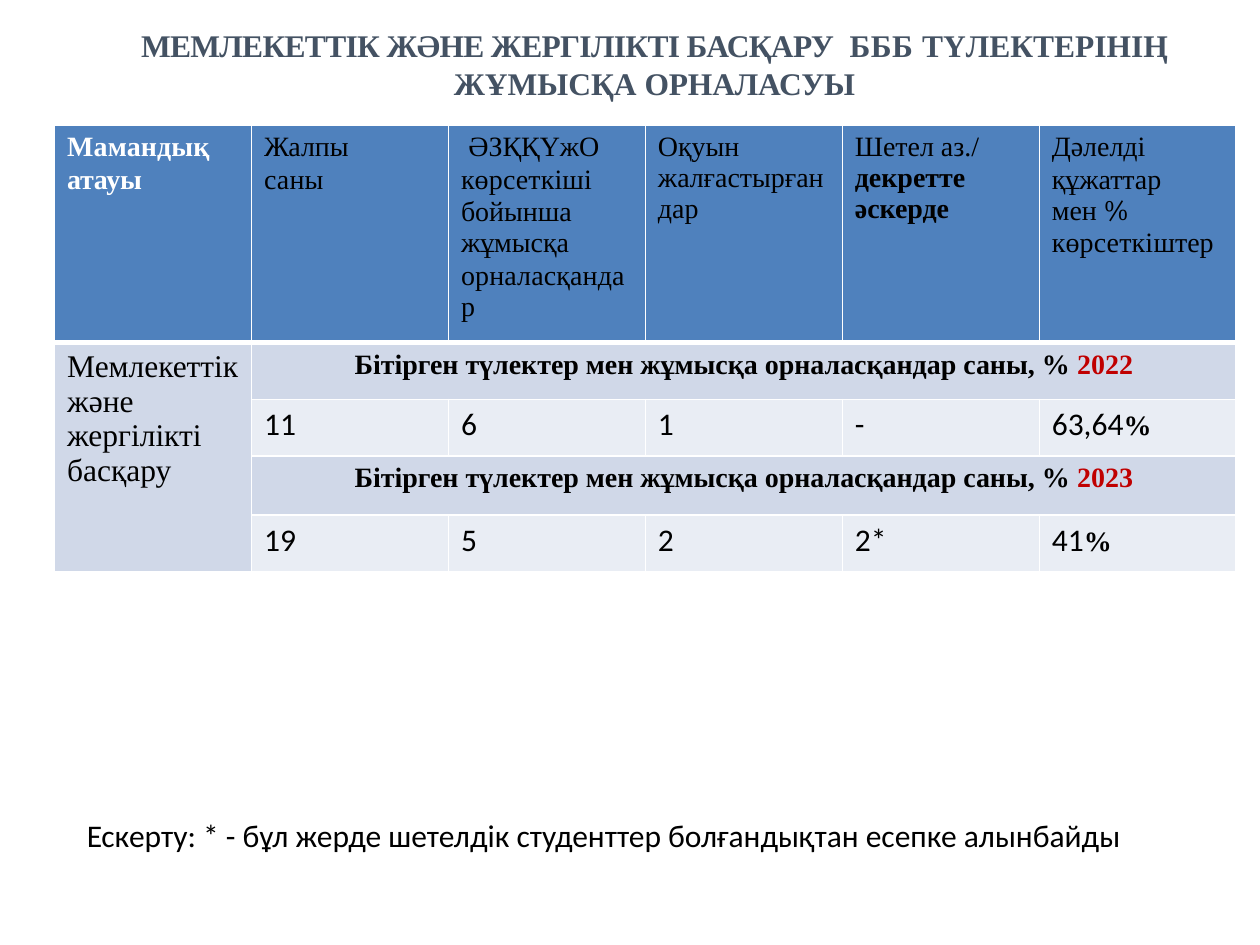
from dataclasses import dataclass
from lxml.etree import SubElement as Sub
from pptx import Presentation as Deck
from pptx.dml.color import RGBColor as Rgb
from pptx.enum.text import PP_ALIGN as Al
from pptx.oxml.ns import qn
from pptx.util import Cm, Pt


@dataclass(frozen=True)
class Theme:
    serif: str = "Times New Roman"
    sans: str = "Calibri"
    math: str = "Cambria"
    big: int = 18
    mid: int = 16
    lead: float = 17.8
    ink: str = "000000"
    slate: str = "445263"
    red: str = "C00000"
    white: str = "FFFFFF"
    head: str = "4F81BD"
    band: str = "D0D8E8"
    pale: str = "E9EDF4"


T = Theme()


class Page:
    """Draws styled elements on the current slide."""

    def __init__(self, deck):
        self.slide = deck.slides.add_slide(deck.slide_layouts[6])

    def run(self, para, text, size=T.mid, face=T.serif, tint=T.ink, bold=False, gap=0):
        run = para.add_run()
        run.text = text
        font = run.font
        font.size, font.name, font.bold = Pt(size), face, bold
        font.color.rgb = Rgb.from_string(tint)
        if gap:
            run._r.get_or_add_rPr().set("spc", str(round(gap * 100)))

    def para(self, frame, runs, first=True, align=Al.LEFT, lead=None, above=0, **look):
        para = frame.paragraphs[0] if first else frame.add_paragraph()
        para.alignment = align
        para.space_before = Pt(above)
        if lead:
            para.line_spacing = Pt(lead)
        for text, own in runs:
            self.run(para, text, **{**look, **own})
        return para

    def text(self, box, runs, pad=None, **look):
        frame = self.slide.shapes.add_textbox(*map(Cm, box)).text_frame
        frame.word_wrap = True
        if pad is not None:
            frame.margin_left = frame.margin_right = Cm(pad)
            frame.margin_top = frame.margin_bottom = Cm(pad)
        self.para(frame, runs, **look)

    def edge(self, cell, side, width):
        line = Sub(cell._tc.get_or_add_tcPr(), qn("a:ln" + side), w=str(Pt(width)))
        Sub(Sub(line, qn("a:solidFill")), qn("a:srgbClr"), val=T.white)

    def grid(self, left, top, cols, rows):
        shape = self.slide.shapes.add_table(
            len(rows), len(cols), Cm(left), Cm(top), Cm(sum(cols)), Cm(sum(rows)))
        table = shape.table
        for col, width in zip(table.columns, cols):
            col.width = Cm(width)
        for row, high in zip(table.rows, rows):
            row.height = Cm(high)
        for r in range(len(rows)):
            for c in range(len(cols)):
                cell = table.cell(r, c)
                for side in "LRTB":
                    thick = (r, side) in ((0, "B"), (1, "T"))
                    self.edge(cell, side, 3 if thick else 1)
                tint = T.head if r == 0 else T.band if c == 0 or r % 2 else T.pale
                cell.fill.solid()
                cell.fill.fore_color.rgb = Rgb.from_string(tint)
        return table


HEADS = [
    [(0, [("Мамандық", {"gap": 0.1})]), (1.4, [("атауы", {"gap": -0.1})])],
    [(0, [("Жалпы", {})]), (1.4, [("саны", {"gap": 0.1})])],
    [(0, [("ӘЗҚҚҮжО", {})]), (1.4, [("көрсеткіші", {"gap": 0.1})]),
     (0, [("бойынша жұмысқа", {})]), (1.4, [("орналасқандар", {"gap": 0.1})])],
    [(0, [("Оқуын", {})]), (0, [("жалғастырғандар", {})])],
    [(0, [("Шетел аз./ ", {}), ("декретте әскерде", {"bold": True})])],
    [(0, [("Дәлелді", {})]), (1.4, [("құжаттар", {})]),
     (0, [("мен ", {}), ("% ", {"face": T.math}),
          ("көрсеткі", {"gap": 0.1}), ("штер", {})])],
]
YEARS = [
    ("2022", T.lead, ["11", "6", "1", "-", "63,64"]),
    ("2023", None, ["19", "5", "2", "2*", "41"]),
]


def main():
    deck = Deck()
    deck.slide_width, deck.slide_height = Cm(25.4), Cm(19.05)
    page = Page(deck)
    page.text((2.49, 0.53, 21.41, 2.31), [
        ("МЕМЛЕКЕТТІК ЖӘНЕ ЖЕРГІЛІКТІ БАСҚАРУ ", {"gap": -0.4}),
        (" БББ ", {"gap": 0.3}),
        ("ТҮЛЕКТЕРІНІҢ ЖҰМЫСҚА ", {}),
        ("ОРНАЛАСУЫ", {"gap": -0.1}),
    ], pad=0, align=Al.CENTER, size=T.big, tint=T.slate, bold=True)

    table = page.grid(1.1, 2.52, [3.97] * 6, [4.39, 1.14, 1.14, 1.19, 1.14])
    for c, paras in enumerate(HEADS):
        look = {"tint": T.white, "bold": True} if c == 0 else {}
        for n, (above, runs) in enumerate(paras):
            para = page.para(table.cell(0, c).text_frame, runs, first=n == 0,
                             lead=T.lead, above=above, **look)
            if (c, n) == (2, 0):
                para._p.get_or_add_pPr().set("marL", str(Cm(0.15)))

    name = table.cell(1, 0)
    name.merge(table.cell(4, 0))
    page.para(name.text_frame, [("Мемлекеттік және жергілікті басқару", {})], size=T.big)

    for n, (year, lead, vals) in enumerate(YEARS):
        r = 1 + 2 * n
        bar = table.cell(r, 1)
        bar.merge(table.cell(r, 5))
        page.para(bar.text_frame, [
            ("Бітірген түлектер мен жұмысқа орналасқандар саны, % ", {}),
            (year, {"tint": T.red}),
        ], align=Al.CENTER, lead=lead, bold=True)
        for c, val in enumerate(vals, 1):
            runs = [(val, {"size": T.big, "face": T.sans})]
            if c == len(vals):
                runs.append(("%", {"bold": True}))
            page.para(table.cell(r + 1, c).text_frame, runs)

    page.text((1.5, 16.33, 22.61, 1.02), [
        ("Ескерту: * - бұл жерде шетелдік студенттер болғандықтан есепке алынбайды", {}),
    ], size=T.big, face=T.sans)
    deck.save("out.pptx")


if __name__ == "__main__":
    main()
